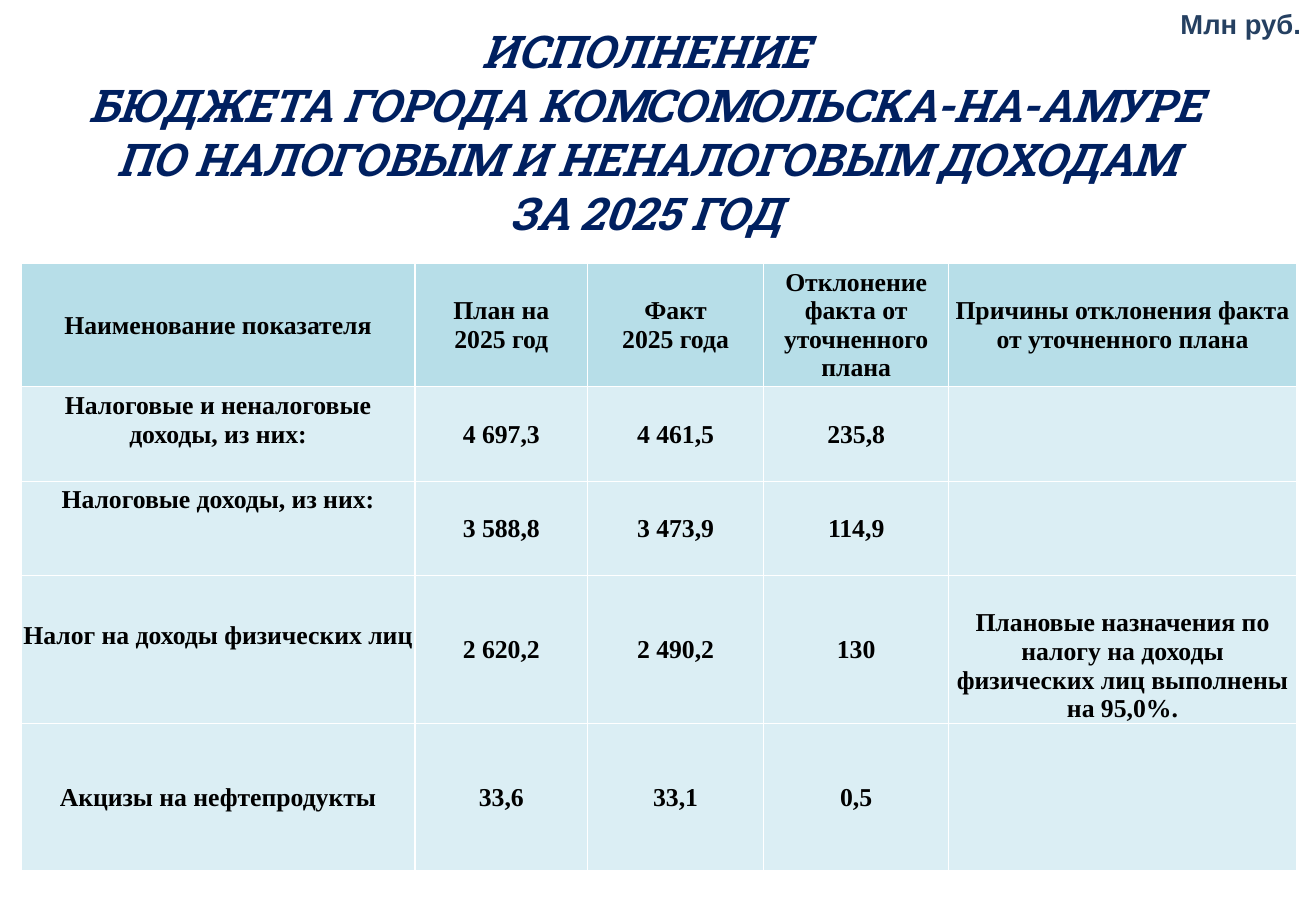
"""Build the slide on the city's 2025 tax and non-tax budget revenue."""
from lxml.etree import SubElement
from pptx import Presentation
from pptx.dml.color import RGBColor
from pptx.enum.text import MSO_ANCHOR, MSO_AUTO_SIZE, PP_ALIGN
from pptx.oxml.ns import qn
from pptx.util import Cm, Pt

TITLE = [
    "ИСПОЛНЕНИЕ",
    "БЮДЖЕТА ГОРОДА КОМСОМОЛЬСКА-НА-АМУРЕ",
    "ПО НАЛОГОВЫМ И НЕНАЛОГОВЫМ ДОХОДАМ",
    "ЗА 2025 ГОД",
]
UNIT = "Млн руб."
ROWS = [
    ["Наименование показателя", "План на\n2025 год", "Факт\n2025 года",
     "Отклонение факта от уточненного плана",
     "Причины отклонения факта от уточненного плана"],
    ["Налоговые и неналоговые доходы, из них:", "4 697,3", "4 461,5", "235,8", ""],
    ["Налоговые доходы, из них:", "3 588,8", "3 473,9", "114,9", ""],
    ["Налог на доходы физических лиц", "2 620,2", "2 490,2", "130",
     "Плановые назначения по налогу на доходы физических лиц выполнены на 95,0%."],
    ["Акцизы на нефтепродукты", "33,6", "33,1", "0,5", ""],
]
COLUMN_WIDTHS = [8.64, 3.78, 3.86, 4.06, 7.62]
ROW_HEIGHTS = [2.7, 2.08, 2.06, 3.24, 3.24]
NAME_GAPS = [0, 0.63, 1.26, 0.63, 0]
COLORS = {"title": "002060", "glow": "7FE0FF", "unit": "254061",
          "text": "000000", "header": "B7DEE8", "body": "DBEEF4"}
FORMATS = {
    "title": {"name": "Roboto Slab", "size": Pt(28), "bold": True, "italic": True},
    "unit": {"name": "Arial", "size": Pt(17), "bold": True},
    "text": {"name": "Times New Roman", "size": Pt(16), "bold": True},
}
BOX_MARGINS = {"margin_left": Cm(0.3), "margin_right": Cm(0.3),
               "margin_top": Cm(0.15), "margin_bottom": Cm(0.15)}


def set_values(target, values):
    for name, value in values.items():
        setattr(target, name, value)


def write(frame, lines, style, align):
    """Put one paragraph per line into the frame."""
    for index, line in enumerate(lines):
        para = frame.add_paragraph() if index else frame.paragraphs[0]
        para.alignment = align
        span = para.add_run()
        span.text = line
        set_values(span.font, FORMATS[style])
        span.font.color.rgb = RGBColor.from_string(COLORS[style])


def add_glow(span):
    """Give the letters a soft coloured shadow."""
    effects = SubElement(span.font.fill._xPr, qn("a:effectLst"))
    span.font.fill._xPr.find(qn("a:solidFill")).addnext(effects)
    shadow = SubElement(effects, qn("a:outerShdw"),
                        blurRad="50800", dist="38100", dir="2700000")
    SubElement(shadow, qn("a:srgbClr"), val=COLORS["glow"])


def add_title(page):
    box = page.shapes.title
    set_values(box, {"left": Cm(0.46), "top": Cm(0.33),
                     "width": Cm(27.38), "height": Cm(5.1)})
    frame = box.text_frame
    set_values(frame, BOX_MARGINS | {"word_wrap": True, "auto_size": MSO_AUTO_SIZE.NONE,
                                     "vertical_anchor": MSO_ANCHOR.MIDDLE})
    write(frame, TITLE, "title", PP_ALIGN.CENTER)
    for para in frame.paragraphs:
        add_glow(para.runs[0])


def add_unit(page):
    box = page.shapes.add_textbox(Cm(25.58), Cm(0), Cm(3.3), Cm(1.04))
    set_values(box.text_frame, BOX_MARGINS | {"word_wrap": False})
    write(box.text_frame, [UNIT], "unit", PP_ALIGN.LEFT)


def add_budget_table(page):
    table = page.shapes.add_table(
        len(ROWS), len(COLUMN_WIDTHS), Cm(0.46), Cm(5.77),
        Cm(sum(COLUMN_WIDTHS)), Cm(sum(ROW_HEIGHTS))).table
    set_values(table, {"first_row": False, "horz_banding": False})
    for column, width in zip(table.columns, COLUMN_WIDTHS):
        column.width = Cm(width)
    for row_index, texts in enumerate(ROWS):
        table.rows[row_index].height = Cm(ROW_HEIGHTS[row_index])
        for column_index, text in enumerate(texts):
            cell = table.cell(row_index, column_index)
            gap = 0 if column_index else NAME_GAPS[row_index]
            is_reason = row_index > 0 and column_index == len(texts) - 1
            set_values(cell, {
                "margin_left": Cm(0.02), "margin_right": Cm(0.02),
                "margin_top": Cm(0.02), "margin_bottom": Cm(gap),
                "vertical_anchor": MSO_ANCHOR.BOTTOM if is_reason else MSO_ANCHOR.MIDDLE})
            cell.fill.solid()
            cell.fill.fore_color.rgb = RGBColor.from_string(
                COLORS["body" if row_index else "header"])
            if text:
                write(cell.text_frame, text.split("\n"), "text", PP_ALIGN.CENTER)


def main():
    deck = Presentation()
    deck.slide_width, deck.slide_height = Cm(28.85), Cm(20.14)
    page = deck.slides.add_slide(deck.slide_layouts[5])
    add_title(page)
    add_budget_table(page)
    add_unit(page)
    deck.save("out.pptx")


if __name__ == "__main__":
    main()
